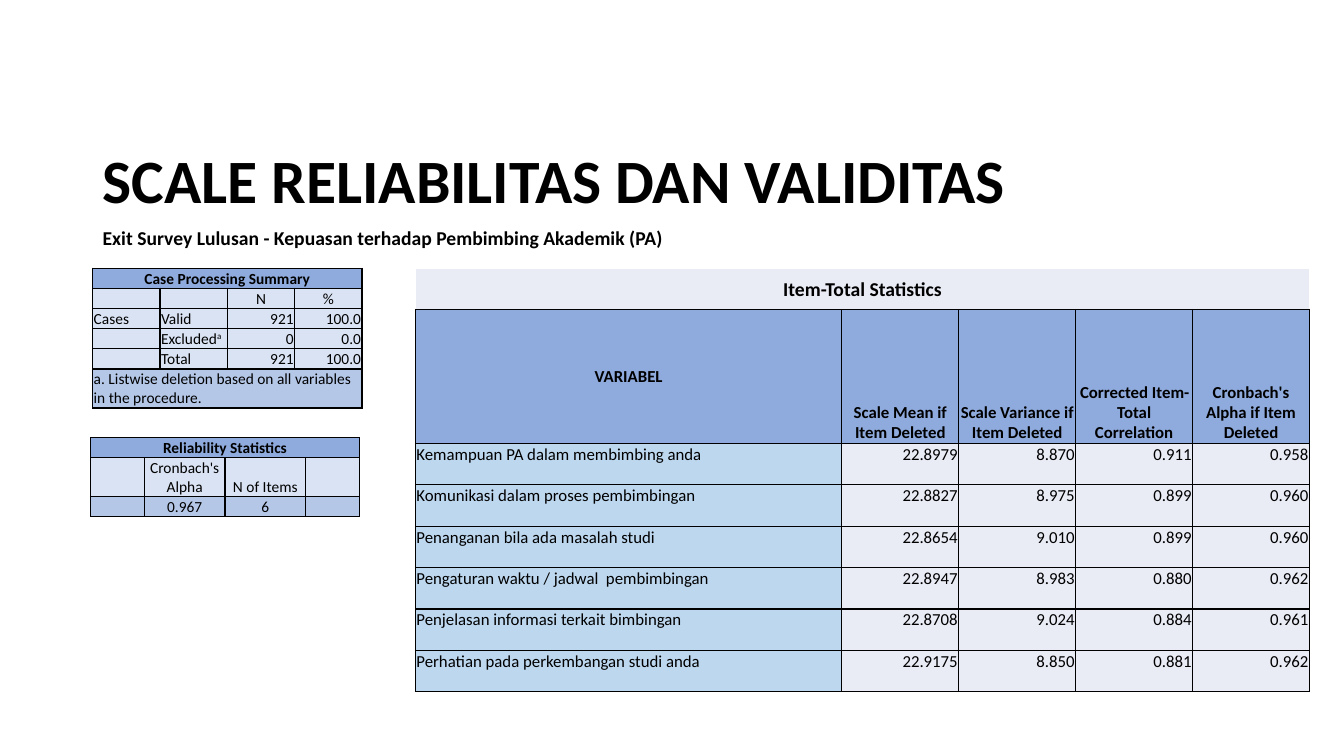
from lxml import etree
from pptx import Presentation, util as u
from pptx.dml.color import RGBColor
from pptx.enum import text
from pptx.oxml.ns import qn

THEME = dict(
    font="Calibri", black="000000", white="FFFFFF",
    header="8FAADC", light="DAE3F3", note="B4C7E7", label="BDD7EE", pale="E9EBF5",
    title=44, subtitle=14, small=11, medium=12,
)
ALIGN = dict(l=text.PP_ALIGN.LEFT, c=text.PP_ALIGN.CENTER, r=text.PP_ALIGN.RIGHT)
ANCHOR = dict(t=text.MSO_ANCHOR.TOP, m=text.MSO_ANCHOR.MIDDLE, b=text.MSO_ANCHOR.BOTTOM)

prs = Presentation()
prs.slide_width, prs.slide_height = u.Inches(13.33), u.Inches(7.5)
# The slide is a grid of 100 columns by 100 rows
COL, ROW = prs.slide_width / 100, prs.slide_height / 100
s = prs.slides.add_slide(prs.slide_layouts[5])


def add_text(p, words, size, bold=True):
    """Add runs to a paragraph; what follows a ^ is superscript."""
    for i, part in enumerate(words.split("^")):
        r = p.add_run()
        r.text = part
        r.font.name, r.font.size, r.font.bold = THEME["font"], u.Pt(size), bold
        r.font.color.rgb = RGBColor.from_string(THEME["black"])
        if i:
            r.font._element.set("baseline", "30000")


def add_grid(left, top, widths, rows, size):
    """Draw a table; a row is (height, texts, fills, aligns, anchors, bold, size, outer edge).

    A row with a single text spans the whole width.
    """
    heights = [row[0] for row in rows]
    frame = s.shapes.add_table(len(rows), len(widths), int(left * COL), int(top * ROW),
                               int(sum(widths) * COL), int(sum(heights) * ROW))
    table = frame.table
    table.first_row = table.horz_banding = False
    for column, width in zip(table.columns, widths):
        column.width = int(width * COL)
    for i, (height, texts, fills, aligns, anchors, bold, *title) in enumerate(rows):
        table.rows[i].height = int(height * ROW)
        row_size, edge = title or (size, "black")
        for j in range(len(widths)):
            cell = table.cell(i, j)
            k = min(j, len(texts) - 1)
            cell.margin_left = cell.margin_right = cell.margin_top = u.Inches(0.01)
            cell.margin_bottom = 0
            cell.vertical_anchor = ANCHOR[anchors[min(j, len(anchors) - 1)]]
            p = cell.text_frame.paragraphs[0]
            p.alignment = ALIGN[aligns[k]]
            if j < len(texts) and texts[j]:
                add_text(p, texts[j], row_size, bold)
            else:
                etree.SubElement(p._p, qn("a:endParaRPr"), sz=str(row_size * 100))
            for side in ("lnL", "lnR", "lnT", "lnB"):
                color = THEME["black" if side == "lnB" else edge]
                ln = etree.SubElement(cell._tc.get_or_add_tcPr(), qn("a:" + side), w="12700")
                fill = etree.SubElement(ln, qn("a:solidFill"))
                etree.SubElement(fill, qn("a:srgbClr"), val=color)
            cell.fill.solid()
            cell.fill.fore_color.rgb = RGBColor.from_string(THEME[fills[min(j, len(fills) - 1)]])
        if len(texts) == 1:
            table.cell(i, 0).merge(table.cell(i, len(widths) - 1))


# Headings
title = s.shapes.title
subtitle = s.shapes.add_textbox(int(6.9 * COL), int(29.6 * ROW), int(46.06 * COL), int(6 * ROW))
title.left, title.top = int(6.9 * COL), int(18 * ROW)
title.width, title.height = int(86.27 * COL), int(12.67 * ROW)
for sp, words, size, anchor in (
    (title, "SCALE RELIABILITAS DAN VALIDITAS", THEME["title"], "m"),
    (subtitle, "Exit Survey Lulusan - Kepuasan terhadap Pembimbing Akademik (PA)",
     THEME["subtitle"], "t"),
):
    tf = sp.text_frame
    tf.word_wrap, tf.auto_size = True, text.MSO_AUTO_SIZE.NONE
    tf.vertical_anchor = ANCHOR[anchor]
    p = tf.paragraphs[0]
    p.alignment, p.line_spacing = ALIGN["l"], 0.9
    add_text(p, words, size)

# Left tables
LINE, TWO_LINES = 2.67, 5.07
cases = [("Cases", "Valid", "921", "100.0"), ("", "Excluded^a", "0", "0.0"),
         ("", "Total", "921", "100.0")]
add_grid(6.9, 35.47, [5.01] * 4, [
    (LINE, ["Case Processing Summary"], ["header"], "c", "m", True),
    (LINE, ["", "", "N", "%"], ["light"], "cccc", "b", False),
    *[(LINE, case, ["light"], "llrr", "t", False) for case in cases],
    (TWO_LINES, ["a. Listwise deletion based on all variables in the procedure."],
     ["note"], "l", "t", False),
], THEME["small"])

add_grid(6.75, 57.87, [4, 6, 6, 4], [
    (LINE, ["Reliability Statistics"], ["header"], "c", "m", True),
    (TWO_LINES, ["", "Cronbach's Alpha", "N of Items", ""], ["light"], "cccc", "b", False),
    (LINE, ["", "0.967", "6", ""], ["note"], "cccc", "t", False),
], THEME["small"])

# Item table
ITEM_ROW = 5.47
items = [
    ("Kemampuan PA dalam membimbing anda", "22.8979", "8.870", "0.911", "0.958"),
    ("Komunikasi dalam proses pembimbingan", "22.8827", "8.975", "0.899", "0.960"),
    ("Penanganan bila ada masalah studi", "22.8654", "9.010", "0.899", "0.960"),
    ("Pengaturan waktu / jadwal  pembimbingan", "22.8947", "8.983", "0.880", "0.962"),
    ("Penjelasan informasi terkait bimbingan", "22.8708", "9.024", "0.884", "0.961"),
    ("Perhatian pada perkembangan studi anda", "22.9175", "8.850", "0.881", "0.962"),
]
add_grid(30.91, 35.47, [31.73] + [8.7] * 4, [
    (ITEM_ROW, ["Item-Total Statistics"], ["pale"], "c", "m", True, THEME["subtitle"], "white"),
    (17.73, ["VARIABEL", "Scale Mean if Item Deleted", "Scale Variance if Item Deleted",
             "Corrected Item-Total Correlation", "Cronbach's Alpha if Item Deleted"],
     ["header"], "ccccc", "mb", True),
    *[(ITEM_ROW, item, ["label", "pale"], "lrrrr", "t", False) for item in items],
], THEME["medium"])

prs.save("out.pptx")
